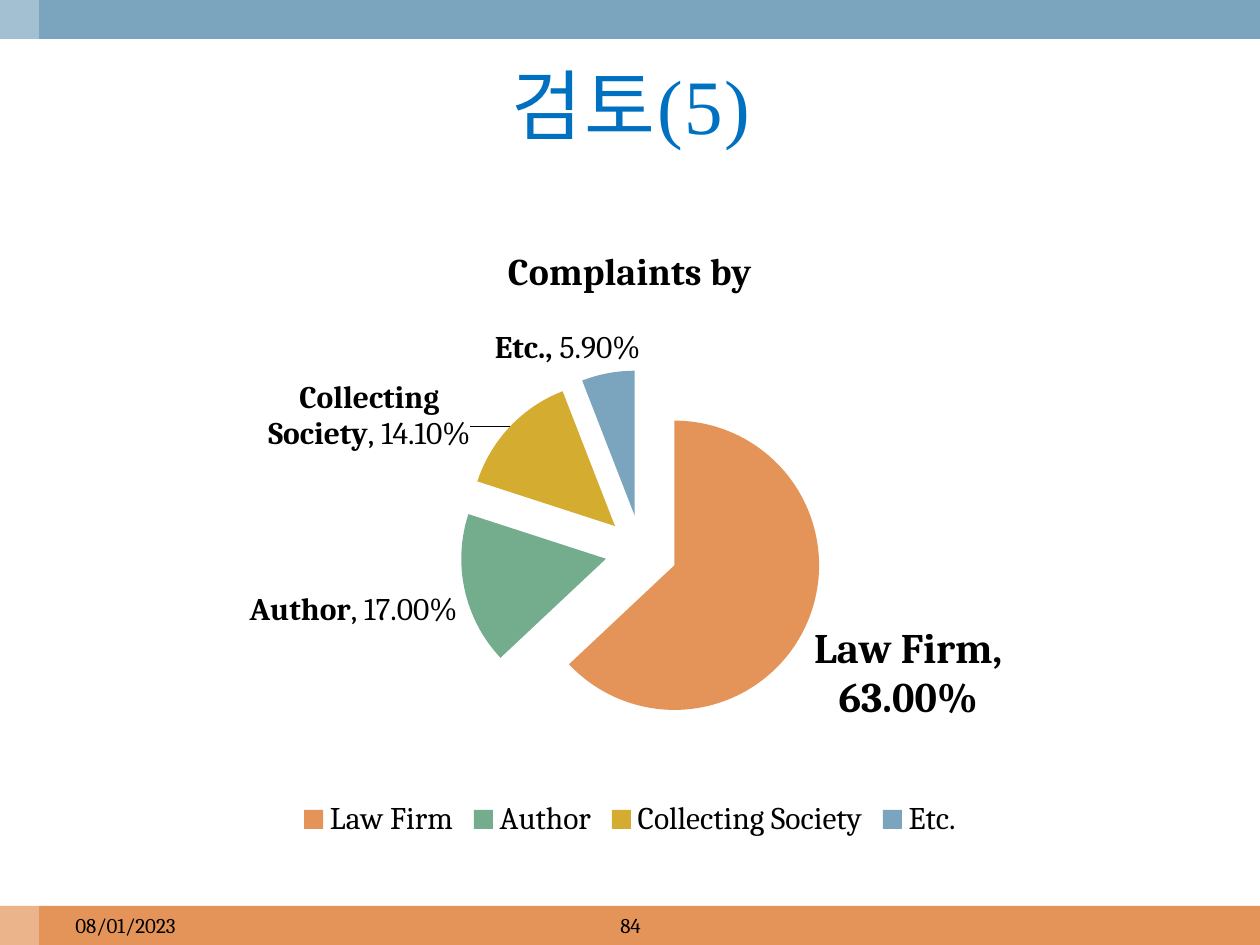
"""Build the review slide with a pie chart of complaints by source."""
from lxml import etree
from pptx import Presentation
from pptx.chart.data import CategoryChartData
from pptx.dml.color import RGBColor
from pptx.enum.chart import XL_CHART_TYPE, XL_LABEL_POSITION, XL_LEGEND_POSITION
from pptx.enum.shapes import MSO_SHAPE
from pptx.enum.text import MSO_ANCHOR, PP_ALIGN
from pptx.oxml import parse_xml
from pptx.oxml.ns import nsdecls, qn
from pptx.util import Inches, Pt

PIE = XL_CHART_TYPE.PIE_EXPLODED
OUTSIDE = XL_LABEL_POSITION.OUTSIDE_END
BOTTOM = XL_LEGEND_POSITION.BOTTOM
RECT = MSO_SHAPE.RECTANGLE
MIDDLE = MSO_ANCHOR.MIDDLE
LEFT, CENTER = PP_ALIGN.LEFT, PP_ALIGN.CENTER

THEME = {
    "orange": "E49458", "green": "74AD8D", "gold": "D4AC30", "blue": "7BA5BE",
    "white": "FFFFFF", "black": "000000", "title": "0070C0",
    "body_font": "Cambria", "title_font": "Times New Roman",
    "title_size": 44, "chart_title_size": 21.6, "key_size": 24,
    "chart_size": 18, "footer_size": 12,
}
W, H, BAR = 10, 7.5, 0.31
FOOT = H - BAR


def style(font, size, color="black", face="body_font", bold=False):
    values = {"size": Pt(THEME[size]), "name": THEME[face], "bold": bold}
    for name, value in values.items():
        setattr(font, name, value)
    font.color.rgb = RGBColor.from_string(THEME[color])


def layout(x, y, w=None, h=None):
    inner = w is not None
    root = parse_xml(f"<c:layout {nsdecls('c')}><c:manualLayout/></c:layout>")
    parts = [("x", x), ("y", y)]
    if inner:
        parts = [("layoutTarget", "inner"), ("xMode", "edge"), ("yMode", "edge"),
                 *parts, ("w", w), ("h", h)]
    for tag, value in parts:
        etree.SubElement(root[0], qn(f"c:{tag}")).set("val", str(value))
    return root


prs = Presentation()
prs.slide_width, prs.slide_height = Inches(W), Inches(H)
s = prs.slides.add_slide(prs.slide_layouts[6])

bands = [
    (0, FOOT, W, BAR, "orange", None),
    (0, 0, W, BAR, "blue", None),
    (0, 0, BAR, H, "white", 30),
]
for x, y, w, h, color, alpha in bands:
    sp = s.shapes.add_shape(RECT, Inches(x), Inches(y), Inches(w), Inches(h))
    sp.shadow.inherit = False
    sp.line.fill.background()
    sp.fill.solid()
    sp.fill.fore_color.rgb = RGBColor.from_string(THEME[color])
    if alpha:
        clr = sp.fill._xPr.find(f".//{qn('a:srgbClr')}")
        etree.SubElement(clr, qn("a:alpha")).set("val", str(alpha * 1000))

texts = [
    ("검토(5)", 0.33, BAR, 9.36, 1.03, CENTER, "title_size", "title", "title_font", 100),
    ("08/01/2023", 0.5, FOOT, 2.33, BAR, LEFT, "footer_size", "black", "body_font", 0),
    ("84", 3.42, FOOT, 3.17, BAR, CENTER, "footer_size", "black", "body_font", 0),
]
for text, x, y, w, h, align, size, color, face, spacing in texts:
    sp = s.shapes.add_textbox(Inches(x), Inches(y), Inches(w), Inches(h))
    tf = sp.text_frame
    tf.word_wrap, tf.vertical_anchor = True, MIDDLE
    p = tf.paragraphs[0]
    p.alignment = align
    r = p.add_run()
    r.text = text
    style(r.font, size, color, face)
    if spacing:
        r.font._element.set("spc", str(spacing))

slices = [
    ("Law Firm", 0.63, "orange", "key_size", ", ", "", True, None),
    ("Author", 0.17, "green", "chart_size", "", ", ", False, None),
    ("Collecting Society", 0.141, "gold", "chart_size", "", ", ", False, (-0.03, 0.05)),
    ("Etc.", 0.059, "blue", "chart_size", ", ", "", False, (0.03, 0)),
]
data = CategoryChartData(number_format="0.00%")
data.categories = [row[0] for row in slices]
data.add_series("Complaints by", [row[1] for row in slices])
chart = s.shapes.add_chart(PIE, Inches(0.5), Inches(1.75), Inches(9), Inches(4.95), data).chart
style(chart.font, "chart_size")
chart.has_title = True
p = chart.chart_title.text_frame.paragraphs[0]
r = p.add_run()
r.text = "Complaints by"
style(r.font, "chart_title_size", bold=True)
chart.has_legend = True
chart.legend.position, chart.legend.include_in_layout = BOTTOM, False
style(chart.legend.font, "chart_size")

plot = chart.plots[0]
plot.vary_by_categories = True
series = plot.series[0]
labels = series.data_labels
formats = {"show_category_name": True, "show_value": True, "show_percentage": False,
           "number_format": "0.00%", "number_format_is_linked": False, "position": OUTSIDE}
for name, value in formats.items():
    setattr(labels, name, value)
style(labels.font, "chart_size")

area = chart._chartSpace.chart.plotArea
for old in area.findall(qn("c:layout")):
    area.remove(old)
area.insert(0, layout(0.35, 0.24, 0.32, 0.58))

for old in series._element.findall(qn("c:explosion")):
    old.set("val", "25")
for i, (name, value, color, size, bold_sep, sep, bold_value, shift) in enumerate(slices):
    point = series.points[i]
    point.format.fill.solid()
    point.format.fill.fore_color.rgb = RGBColor.from_string(THEME[color])
    label = point.data_label
    p = label.text_frame.paragraphs[0]
    for text, bold in [(name + bold_sep, True), (f"{sep}{value:.2%}", bold_value)]:
        r = p.add_run()
        r.text = text
        style(r.font, size, bold=bold)
    label.position = OUTSIDE
    label._dLbl.find(qn("c:showCatName")).set("val", "1")
    if shift:
        label._dLbl.find(qn("c:idx")).addnext(layout(*shift))

prs.save("out.pptx")
